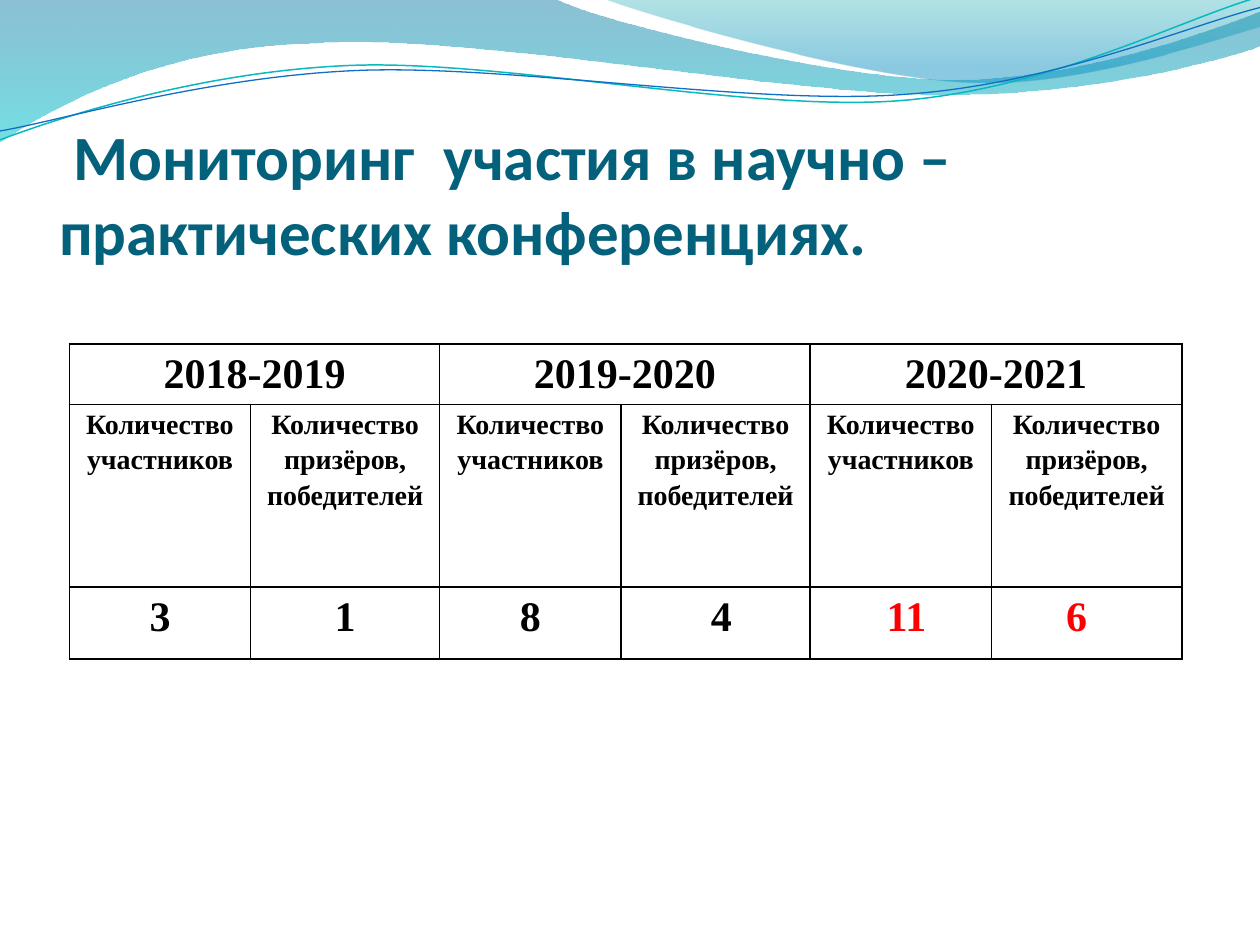
from dataclasses import dataclass
from math import cos, radians, sin
from typing import Optional

from lxml.etree import SubElement
from pptx import Presentation
from pptx.dml.color import RGBColor
from pptx.enum.text import MSO_ANCHOR, PP_ALIGN
from pptx.oxml import parse_xml
from pptx.oxml.ns import nsdecls, qn
from pptx.util import Inches, Pt

SLIDE_WIDTH, SLIDE_HEIGHT = Inches(10), Inches(7.5)
BLACK, RED, TITLE_COLOR = "000000", "FF0000", "04617B"


@dataclass(frozen=True)
class Stop:
    position: float
    color: str
    opacity: int


@dataclass(frozen=True)
class Wave:
    start: tuple
    segments: tuple
    stops: tuple = ()
    line_color: str = ""
    line_width: float = 0
    center: tuple = (0, 0)
    rotation: float = 0


@dataclass(frozen=True)
class CellText:
    text: str
    size: int
    color: str = BLACK
    indent: float = 0
    right_margin: float = 0


WAVES = (
    Wave(
        (0, 0),
        ((4.4, -0.01), (4.76, 0.17, 6.64, 0.63, 7.58, 0.63),
         (8.53, 0.63, 9.58, 0.26, 10, 0.09), (10.01, 0.36),
         (9.83, 0.44, 8.7, 0.76, 7.46, 0.75), (6.22, 0.75, 3.82, 0.28, 2.57, 0.34),
         (1.29, 0.36, 0.46, 0.83, -0.01, 1.13), (0, 0)),
        stops=(Stop(0, "0074A1", 45), Stop(1, "00C6CF", 55)),
    ),
    Wave(
        (4.79, -0.01),
        ((5.09, 0.11, 6.82, 0.62, 7.69, 0.65),
         (8.56, 0.69, 9.61, 0.32, 10, 0.21), (10, 0), (4.79, -0.01)),
        stops=(Stop(0, "00A1A9", 30), Stop(0.8, "008BBF", 45)),
    ),
    Wave(
        (0, 1.11),
        ((0.48, 0.93, 1.58, 0.57, 2.77, 0.52), (3.95, 0.47, 5.93, 0.89, 7.13, 0.8),
         (8.33, 0.71, 9.38, 0.15, 9.98, -0.02)),
        line_color="0AB8BF", line_width=0.85, center=(4.99, 0.58), rotation=-2.7,
    ),
    Wave(
        (0, 1.04),
        ((0.47, 0.96, 1.64, 0.61, 2.83, 0.56), (4.03, 0.51, 5.97, 0.84, 7.17, 0.75),
         (8.36, 0.67, 9.41, 0.21, 10, 0.06)),
        line_color="0F6FC6", line_width=0.75, center=(5, 0.59), rotation=-2.7,
    ),
)

YEARS = ("2018-2019", "2019-2020", "2020-2021")
MEASURES = ("Количество участников", "Количество призёров, победителей")
RESULTS = (
    CellText("3", 24), CellText("1", 24), CellText("8", 24),
    CellText("4", 24, indent=0.42, right_margin=0.33),
    CellText("11", 24, RED, indent=0.42, right_margin=0.33),
    CellText("6", 24, RED, right_margin=0.16),
)
COLUMN_WIDTHS = (1.44, 1.5) * 2 + (1.44, 1.51)
ROW_HEIGHTS = (0.48, 1.45, 0.57)


def rgb(color: str) -> RGBColor:
    return RGBColor.from_string(color)


def unrotated(wave: Wave, x: float, y: float) -> tuple:
    angle = radians(-wave.rotation)
    across, down = x - wave.center[0], y - wave.center[1]
    return (Inches(wave.center[0] + across * cos(angle) - down * sin(angle)),
            Inches(wave.center[1] + across * sin(angle) + down * cos(angle)))


def bend_segments(shape, segments: list) -> None:
    lines = list(shape.element.spPr.iter(qn("a:lnTo")))
    for line, points in zip(lines, segments):
        if len(points) == 1:
            continue
        curve = parse_xml(f'<a:cubicBezTo {nsdecls("a")}/>')
        for x, y in points:
            point = SubElement(curve, qn("a:pt"))
            point.set("x", str(x - shape.left))
            point.set("y", str(y - shape.top))
        line.getparent().replace(line, curve)


def draw_wave(slide, wave: Wave) -> None:
    segments = [
        [unrotated(wave, *pair) for pair in zip(segment[::2], segment[1::2])]
        for segment in wave.segments
    ]
    builder = slide.shapes.build_freeform(*unrotated(wave, *wave.start), scale=1.0)
    builder.add_line_segments([points[-1] for points in segments], close=bool(wave.stops))
    shape = builder.convert_to_shape()
    bend_segments(shape, segments)
    shape.rotation = wave.rotation
    shape.shadow.inherit = False
    if not wave.stops:
        shape.fill.background()
        shape.line.color.rgb = rgb(wave.line_color)
        shape.line.width = Pt(wave.line_width)
        return
    shape.line.fill.background()
    shape.fill.gradient()
    shape.fill.gradient_angle = 270
    for target, stop in zip(shape.fill.gradient_stops, wave.stops):
        target.color.rgb = rgb(stop.color)
        target.position = stop.position
    for color, stop in zip(shape.element.spPr.iter(qn("a:srgbClr")), wave.stops):
        SubElement(color, qn("a:alpha")).set("val", str(stop.opacity * 1000))


def add_run(paragraph, text: str, font_name: str, size: int, color: str) -> None:
    run = paragraph.add_run()
    run.text = text
    run.font.name = font_name
    run.font.size = Pt(size)
    run.font.bold = True
    run.font.color.rgb = rgb(color)


def draw_title(slide) -> None:
    shape = slide.shapes.add_textbox(
        Inches(0.47), Inches(1.48), int(SLIDE_WIDTH * 0.9), Inches(1.25))
    frame = shape.text_frame
    frame.word_wrap = True
    frame.vertical_anchor = MSO_ANCHOR.BOTTOM
    frame.margin_left = frame.margin_right = 0
    frame.margin_bottom = Inches(0.6)
    add_run(frame.paragraphs[0], " Мониторинг  участия в научно – практических конференциях.",
            "Calibri", 36, TITLE_COLOR)


def style_cell(cell) -> None:
    cell.margin_left = cell.margin_right = Inches(0.07)
    cell.margin_top = cell.margin_bottom = 0
    cell.fill.background()
    properties = cell._tc.get_or_add_tcPr()
    for index, side in enumerate(("lnL", "lnR", "lnT", "lnB")):
        properties.insert(index, parse_xml(
            f'<a:{side} {nsdecls("a")} w="{Pt(1)}"><a:solidFill>'
            f'<a:srgbClr val="{BLACK}"/></a:solidFill></a:{side}>'))


def write_cell(cell, content: CellText) -> None:
    paragraph = cell.text_frame.paragraphs[0]
    paragraph.alignment = PP_ALIGN.CENTER
    paragraph.line_spacing = 1.15
    for name, length in (("indent", content.indent), ("marR", content.right_margin)):
        if length:
            paragraph._p.get_or_add_pPr().set(name, str(Inches(length)))
    add_run(paragraph, content.text, "Times New Roman", content.size, content.color)


def table_rows() -> tuple:
    years: list[Optional[CellText]] = []
    for year in YEARS:
        years += [CellText(year, 24), None]
    measures = [CellText(measure, 16) for measure in MEASURES * len(YEARS)]
    return years, measures, RESULTS


def draw_table(slide) -> None:
    table = slide.shapes.add_table(
        len(ROW_HEIGHTS), len(COLUMN_WIDTHS), Inches(0.55), Inches(2.73),
        Inches(sum(COLUMN_WIDTHS)), Inches(sum(ROW_HEIGHTS))).table
    table.first_row = table.horz_banding = False
    for column, width in zip(table.columns, COLUMN_WIDTHS):
        column.width = Inches(width)
    for row, height in zip(table.rows, ROW_HEIGHTS):
        row.height = Inches(height)
    for column in range(0, len(COLUMN_WIDTHS), len(MEASURES)):
        table.cell(0, column).merge(table.cell(0, column + 1))
    for row, contents in enumerate(table_rows()):
        for column, content in enumerate(contents):
            cell = table.cell(row, column)
            style_cell(cell)
            if content:
                write_cell(cell, content)


def main() -> None:
    presentation = Presentation()
    presentation.slide_width, presentation.slide_height = SLIDE_WIDTH, SLIDE_HEIGHT
    slide = presentation.slides.add_slide(presentation.slide_layouts[6])
    for wave in WAVES:
        draw_wave(slide, wave)
    draw_title(slide)
    draw_table(slide)
    presentation.save("out.pptx")


if __name__ == "__main__":
    main()
